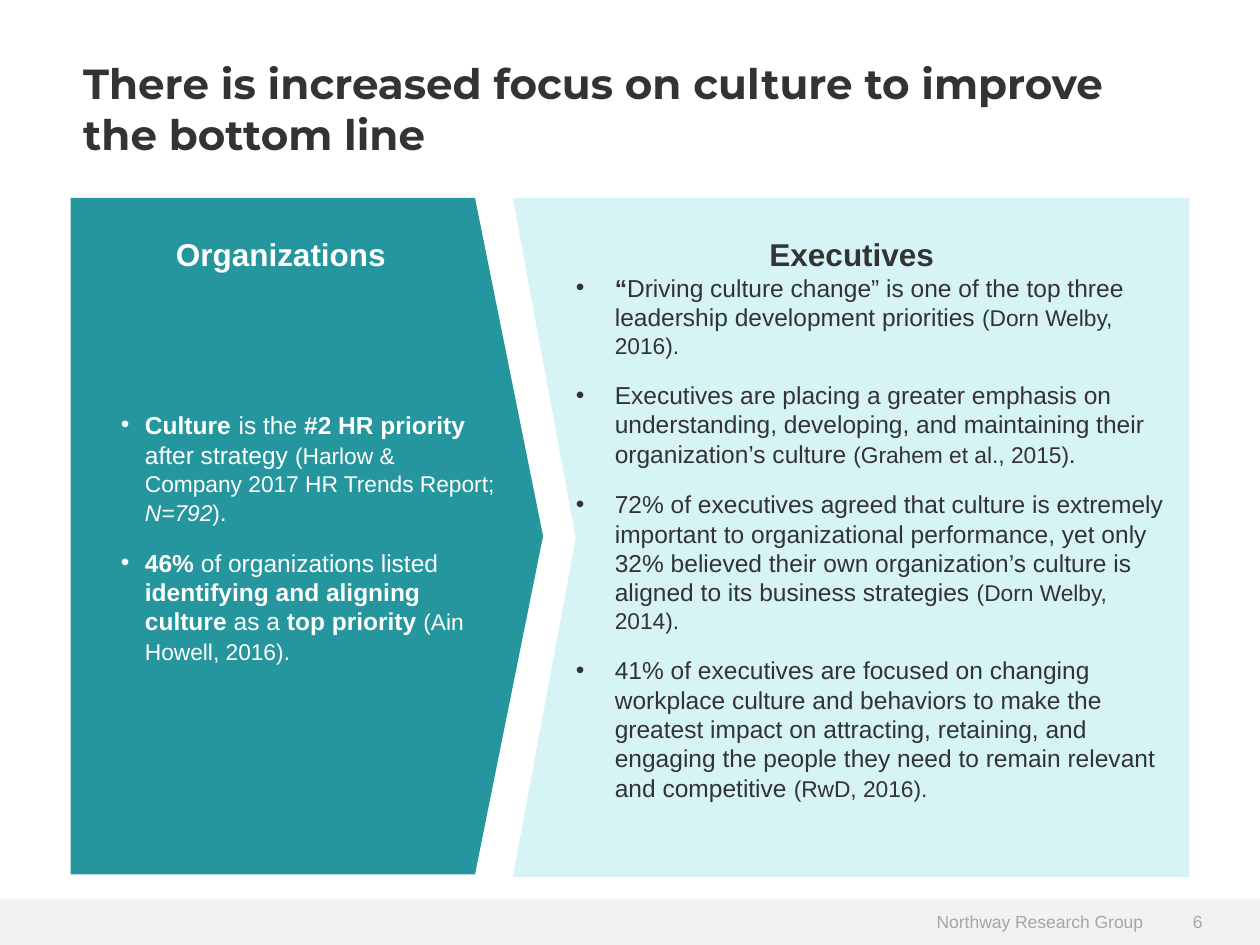
from pptx import Presentation
from pptx.dml.color import RGBColor
from pptx.enum.shapes import MSO_SHAPE
from pptx.enum.text import MSO_ANCHOR, PP_ALIGN
from pptx.oxml.xmlchemy import OxmlElement
from pptx.util import Inches, Pt

TEAL, PALE_TEAL, FOOTER_GRAY = "25969E", "D6F3F6", "F2F2F2"
DARK, WHITE, MUTED = "333333", "FFFFFF", "A6A6A6"

TITLE = "There is increased focus on culture to improve the bottom line"
FOOTER = "Northway Research Group"
PAGE_NUMBER = "6"

# Each bullet is a list of runs: text, size, style ("b" bold, "i" italic)
ORGANIZATION_BULLETS = [
    [("Culture", 14, "b"), (" ", 16, "b"), ("is the ", 14, ""),
     ("#2 HR priority ", 14, "b"), ("after strategy ", 14, ""),
     ("(Harlow & Company 2017 HR Trends Report; ", 13, ""),
     ("N=792", 13, "i"), (")", 13, ""), (".", 14, "")],
    [("46%", 14, "b"), (" of organizations listed ", 14, ""),
     ("identifying and aligning culture", 14, "b"), (" as a ", 14, ""),
     ("top priority ", 14, "b"), ("(Ain Howell, 2016)", 13, ""), (".", 14, "")],
]
EXECUTIVE_BULLETS = [
    [("“", 14, "b"),
     ("Driving culture change” is one of the top three leadership "
      "development priorities ", 14, ""),
     ("(Dorn Welby, 2016).", 13, "")],
    [("Executives are placing a greater emphasis on understanding, developing, "
      "and maintaining their organization’s culture ", 14, ""),
     ("(Grahem et al., 2015)", 13, ""), (".", 14, "")],
    [("72% of executives agreed that culture is extremely important to "
      "organizational performance, yet only 32% believed their own "
      "organization’s culture is aligned to its business strategies ", 14, ""),
     ("(Dorn Welby, 2014).", 13, "")],
    [("41% of executives are focused on changing workplace culture and "
      "behaviors to make the greatest impact on attracting, retaining, and "
      "engaging the people they need to remain relevant and competitive ", 14, ""),
     ("(RwD, 2016).", 13, "")],
]
HEADINGS = [
    ("Organizations", 0.86, 2.74, WHITE),
    ("Executives", 5.47, 2.58, DARK),
]

PANEL_TOP = 1.57
EXECUTIVE_OUTLINE = [(4.07, PANEL_TOP), (9.44, PANEL_TOP), (9.44, 6.96),
                     (4.07, 6.96), (4.57, 4.27)]


def rgb(color):
    return RGBColor.from_string(color)


def paint(shape, color):
    shape.fill.solid()
    shape.fill.fore_color.rgb = rgb(color)
    shape.line.fill.background()
    shape.shadow.inherit = False


def style_run(run, size, color, bold=False, italic=False, font="Arial"):
    run.font.name, run.font.size = font, Pt(size)
    run.font.bold, run.font.italic = bold, italic
    run.font.color.rgb = rgb(color)


def write_line(shape, text, size, color, align, **style):
    frame = shape.text_frame
    frame.text = text
    frame.word_wrap = True
    paragraph = frame.paragraphs[0]
    paragraph.alignment = align
    style_run(paragraph.runs[0], size, color, **style)
    return paragraph


def write_bullets(shape, bullets, color, indent, hanging):
    frame = shape.text_frame
    frame.word_wrap = True
    frame.vertical_anchor = MSO_ANCHOR.MIDDLE
    frame.margin_left = 0
    for number, runs in enumerate(bullets):
        paragraph = frame.add_paragraph() if number else frame.paragraphs[0]
        paragraph.alignment = PP_ALIGN.LEFT
        paragraph.space_before = paragraph.space_after = Pt(6)
        properties = paragraph._p.get_or_add_pPr()
        properties.set("marL", str(Inches(indent)))
        properties.set("indent", str(-Inches(hanging)))
        typeface = OxmlElement("a:buFont")
        typeface.set("typeface", "Arial")
        mark = OxmlElement("a:buChar")
        mark.set("char", "•")
        properties.extend([typeface, mark])
        for text, size, style in runs:
            run = paragraph.add_run()
            run.text = text
            style_run(run, size, color, "b" in style, "i" in style)


def add_footer_part(slide, left, width, text, align, indent):
    bar = slide.shapes.add_shape(MSO_SHAPE.RECTANGLE, Inches(left), Inches(7.13),
                                 Inches(width), Inches(0.37))
    paint(bar, FOOTER_GRAY)
    bar.text_frame.vertical_anchor = MSO_ANCHOR.MIDDLE
    paragraph = write_line(bar, text, 10, MUTED, align)
    paragraph._p.get_or_add_pPr().set("marL", str(Inches(indent)))


def main():
    deck = Presentation()
    deck.slide_width, deck.slide_height = Inches(10), Inches(7.5)
    slide = deck.slides.add_slide(deck.slide_layouts[5])
    shapes = slide.shapes

    title = shapes.title
    title.left, title.top = Inches(0.56), Inches(0.41)
    title.width, title.height = Inches(8.89), Inches(0.94)
    title.text_frame.vertical_anchor = MSO_ANCHOR.TOP
    write_line(title, TITLE, 24, DARK, PP_ALIGN.LEFT, bold=True, font="Montserrat")

    add_footer_part(slide, 0, 9.17, FOOTER, PP_ALIGN.RIGHT, 0.29)
    add_footer_part(slide, 9.17, 0.83, PAGE_NUMBER, PP_ALIGN.LEFT, 0.2)

    start, *corners = [(Inches(x), Inches(y)) for x, y in EXECUTIVE_OUTLINE]
    outline = shapes.build_freeform(*start)
    outline.add_line_segments(corners, close=True)
    executives = outline.convert_to_shape()
    paint(executives, PALE_TEAL)
    write_bullets(executives, EXECUTIVE_BULLETS, DARK, 0.81, 0.31)

    organizations = shapes.add_shape(MSO_SHAPE.PENTAGON, Inches(0.56),
                                     Inches(PANEL_TOP), Inches(3.75), Inches(5.37))
    organizations.adjustments[0] = 0.144
    paint(organizations, TEAL)
    write_bullets(organizations, ORGANIZATION_BULLETS, WHITE, 0.59, 0.19)

    for text, left, width, color in HEADINGS:
        heading = shapes.add_textbox(Inches(left), Inches(1.82),
                                     Inches(width), Inches(0.4))
        write_line(heading, text, 18, color, PP_ALIGN.CENTER, bold=True)

    deck.save("out.pptx")


if __name__ == "__main__":
    main()
